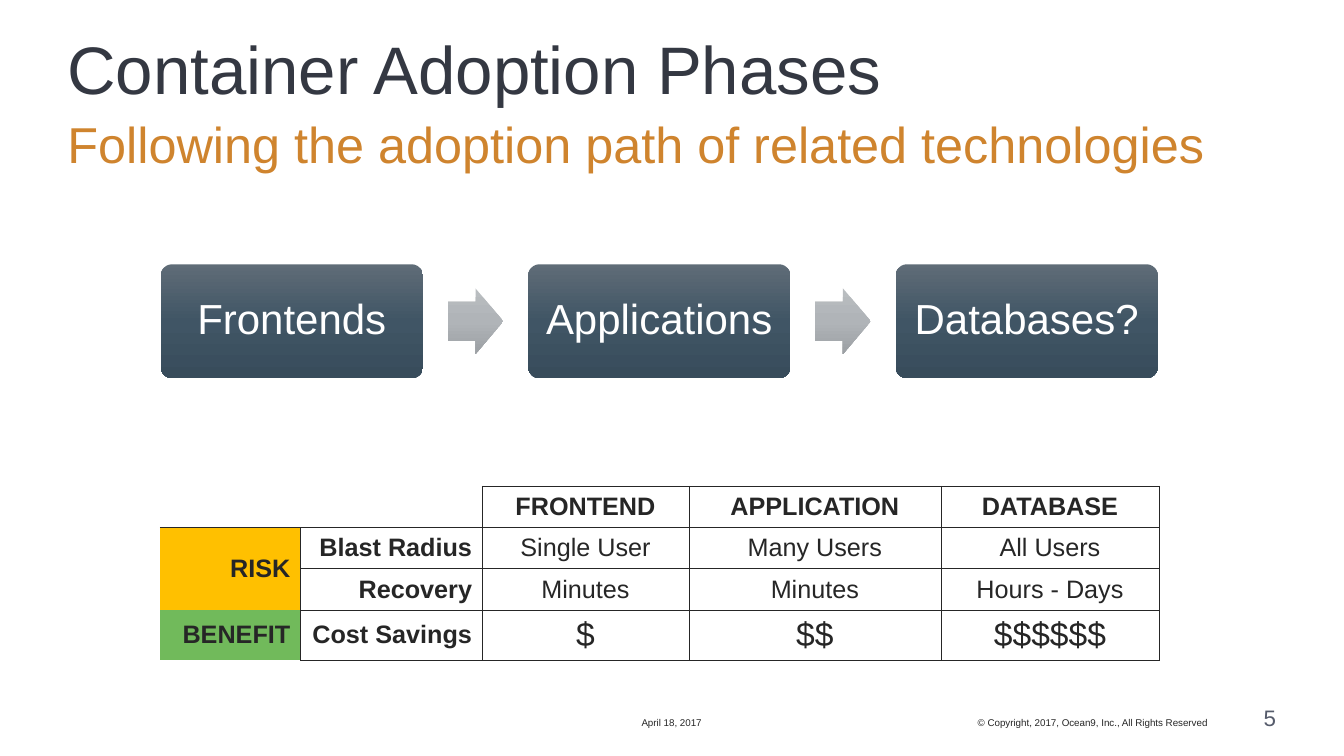
from copy import deepcopy

from lxml import etree
from pptx import Presentation
from pptx import util as u
from pptx.dml.color import RGBColor
from pptx.enum import shapes, text
from pptx.oxml import ns

COLORS = {
    "title": "343842", "subtitle": "CF842E", "ink": "262626",
    "number": "555B6B", "white": "FFFFFF", "risk": "FFC000", "benefit": "71BA5B",
}
CARD_GRADIENT = ["5F6C77", "405565", "384C5B"]
ARROW_GRADIENT = ["B9BDC0", "B0B4B8", "9CA0A4"]
PHASES = ["Frontends", "Applications", "Databases?"]
ROWS = [
    ["", "", "FRONTEND", "APPLICATION", "DATABASE"],
    ["RISK", "Blast Radius", "Single User", "Many Users", "All Users"],
    ["", "Recovery", "Minutes", "Minutes", "Hours - Days"],
    ["BENEFIT", "Cost Savings", "$", "$$", "$$$$$$"],
]
COLUMN_WIDTHS = [3.54, 4.58, 5.21, 6.35, 5.5]
ROW_HEIGHTS = [1.04, 1.04, 1.04, 1.19]
LEFT, CENTER, RIGHT = text.PP_ALIGN.LEFT, text.PP_ALIGN.CENTER, text.PP_ALIGN.RIGHT
TOP, MIDDLE, BOTTOM = (text.MSO_ANCHOR.TOP, text.MSO_ANCHOR.MIDDLE,
                       text.MSO_ANCHOR.BOTTOM)


def add_run(para, words, size, color, align, bold=False):
    para.alignment = align
    span = para.add_run()
    span.text = words
    span.font.name = "Arial"
    span.font.size = u.Pt(size)
    span.font.bold = bold
    span.font.color.rgb = RGBColor.from_string(COLORS[color])


def set_frame(frame, anchor, inset=0.0, wrap=True):
    frame.word_wrap = wrap
    frame.vertical_anchor = anchor
    frame.margin_left = frame.margin_right = u.Cm(inset)
    frame.margin_top = frame.margin_bottom = u.Cm(inset)


def add_label(page, box, words, size, color, align=LEFT, anchor=BOTTOM,
              spacing=1.0, wrap=False):
    label = page.shapes.add_textbox(*map(u.Cm, box))
    set_frame(label.text_frame, anchor, wrap=wrap)
    para = label.text_frame.paragraphs[0]
    para.line_spacing = spacing
    add_run(para, words, size, color, align)


def add_gradient_shape(page, kind, box, adjustments, gradient):
    """Add a borderless shape shaded from top to bottom in three colours."""
    shape = page.shapes.add_shape(kind, *map(u.Cm, box))
    shape.shadow.inherit = False
    shape.line.fill.background()
    for index, value in enumerate(adjustments):
        shape.adjustments[index] = value
    shape.fill.gradient()
    shape.fill.gradient_angle = 270
    stop_list = shape.element.spPr.find(".//" + ns.qn("a:gsLst"))
    stop_list.append(deepcopy(stop_list[0]))
    for index, stop in enumerate(shape.fill.gradient_stops):
        stop.position = index / 2
        stop.color.rgb = RGBColor.from_string(gradient[index])
    return shape


def add_heading(page, left, top, width):
    add_label(page, (left, top, width, 1.91), "Container Adoption Phases",
              48, "title", spacing=0.9, wrap=True)
    add_label(page, (left, top + 2.13, width, 1.47),
              "Following the adoption path of related technologies",
              36, "subtitle", anchor=MIDDLE, spacing=0.9, wrap=True)


def add_phases(page, left, top, width, height):
    """Spread the phase cards over the width, with an arrow in each gap."""
    card_width, arrow_width, arrow_height = 6.61, 1.4, 1.65
    pitch = (width - card_width) / (len(PHASES) - 1)
    for index, phase in enumerate(PHASES):
        x = left + index * pitch
        card = add_gradient_shape(page, shapes.MSO_SHAPE.ROUNDED_RECTANGLE,
                                  (x, top, card_width, height), [0.1], CARD_GRADIENT)
        set_frame(card.text_frame, MIDDLE, 0.3)
        para = card.text_frame.paragraphs[0]
        para.line_spacing = 0.9
        add_run(para, phase, 30, "white", CENTER)
        if index < len(PHASES) - 1:
            gap = pitch - card_width
            add_gradient_shape(
                page, shapes.MSO_SHAPE.RIGHT_ARROW,
                (x + card_width + (gap - arrow_width) / 2,
                 top + (height - arrow_height) / 2, arrow_width, arrow_height),
                [0.6, 0.5], ARROW_GRADIENT)


def dark_edges(row, column):
    """Name the sides of a cell that carry a line."""
    if row == 0 and column < 2:
        return "B" if column == 0 else "RB"
    if column == 0:
        return "RT" if row == 1 else "R"
    return "LRTB"


def draw_edges(cell, dark):
    properties = cell._tc.get_or_add_tcPr()
    for side in "LRTB":
        line = etree.SubElement(properties, ns.qn("a:ln" + side), w=str(u.Pt(0.5)))
        if side in dark:
            fill = etree.SubElement(line, ns.qn("a:solidFill"))
            etree.SubElement(fill, ns.qn("a:srgbClr"), val=COLORS["ink"])
        else:
            etree.SubElement(line, ns.qn("a:noFill"))


def add_comparison(page, left, top):
    frame = page.shapes.add_table(
        len(ROWS), len(COLUMN_WIDTHS), u.Cm(left), u.Cm(top),
        u.Cm(sum(COLUMN_WIDTHS)), u.Cm(sum(ROW_HEIGHTS)))
    table = frame.table
    table.first_row = table.horz_banding = False
    for column, width in zip(table.columns, COLUMN_WIDTHS):
        column.width = u.Cm(width)
    for row, height in zip(table.rows, ROW_HEIGHTS):
        row.height = u.Cm(height)
    fills = {"RISK": "risk", "BENEFIT": "benefit"}
    for r, row in enumerate(ROWS):
        for c, words in enumerate(row):
            cell = table.cell(r, c)
            draw_edges(cell, dark_edges(r, c))
            cell.vertical_anchor = MIDDLE
            if words in fills:
                cell.fill.solid()
                cell.fill.fore_color.rgb = RGBColor.from_string(COLORS[fills[words]])
            else:
                cell.fill.background()
            if words:
                add_run(cell.text_frame.paragraphs[0], words,
                        24 if words.startswith("$") else 18, "ink",
                        RIGHT if c < 2 else CENTER, bold=r == 0 or c < 2)
    table.cell(1, 0).merge(table.cell(2, 0))


def add_footer(page, top):
    add_label(page, (15.54, top, 2.77, 0.58), "April 18, 2017", 7, "ink", CENTER)
    add_label(page, (19.25, top, 11.18, 0.58),
              "© Copyright, 2017, Ocean9, Inc., All Rights Reserved", 7, "ink", RIGHT)
    add_label(page, (30.68, top, 1.48, 0.64), "5", 16, "number", RIGHT)


def main():
    deck = Presentation()
    deck.slide_width, deck.slide_height = u.Cm(33.87), u.Cm(19.05)
    page = deck.slides.add_slide(deck.slide_layouts[6])
    add_heading(page, 1.7, 0.85, 30.48)
    add_phases(page, 4.05, 6.66, 25.13, 2.87)
    add_comparison(page, 4.03, 12.25)
    add_footer(page, 17.78)
    deck.save("out.pptx")


if __name__ == "__main__":
    main()
